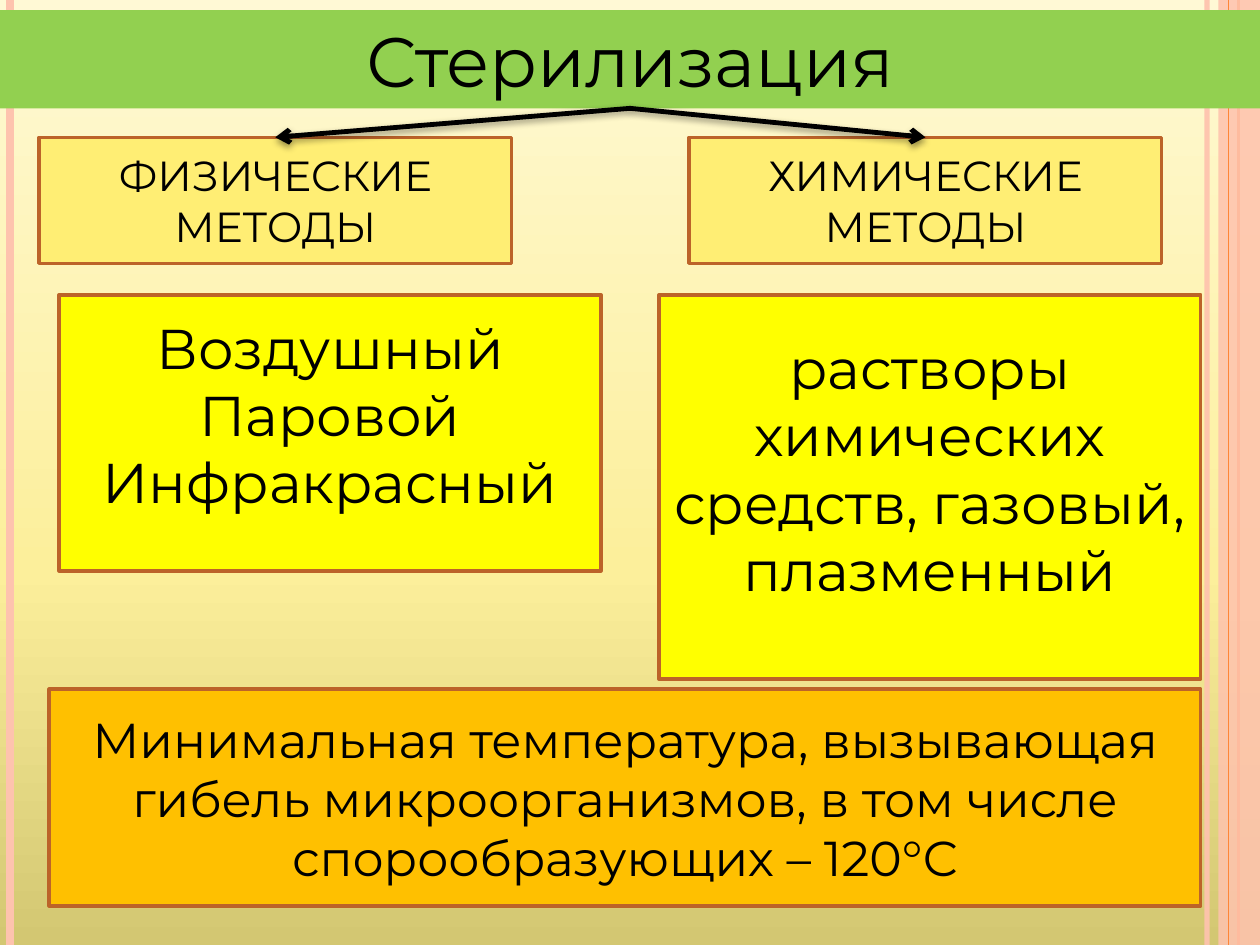
from copy import deepcopy

from lxml import etree
from pptx import Presentation
from pptx.dml.color import RGBColor
from pptx.enum.shapes import MSO_CONNECTOR, MSO_SHAPE
from pptx.enum.text import MSO_ANCHOR, MSO_AUTO_SIZE, PP_ALIGN
from pptx.oxml.ns import qn
from pptx.util import Inches, Pt

RECTANGLE = MSO_SHAPE.RECTANGLE
STRAIGHT = MSO_CONNECTOR.STRAIGHT
CENTER, MIDDLE = PP_ALIGN.CENTER, MSO_ANCHOR.MIDDLE
TOP_SIDE, BOTTOM_SIDE = 0, 2
TITLE_ONLY = 5
WIDTH, HEIGHT = 10, 7.5
FONT = "Montserrat"
COLORS = {
    "text": "000000", "title": "92D050", "heading": "FFEE74", "methods": "FFFF00",
    "note": "FFC000", "border": "BC6329", "pale": "FEC3AE", "orange": "FE8637",
}
BACKGROUND = [(0, "D3C772"), (40, "FCEF9B"), (100, "FFF9D5")]

TITLE = "Стерилизация"
GROUPS = [
    {"heading": "ФИЗИЧЕСКИЕ МЕТОДЫ", "heading_left": 0.31,
     "methods": ["Воздушный", "Паровой", "Инфракрасный"],
     "methods_left": 0.47, "methods_height": 2.19},
    {"heading": "ХИМИЧЕСКИЕ МЕТОДЫ", "heading_left": 5.47,
     "methods": ["растворы химических средств, газовый, плазменный"],
     "methods_left": 5.23, "methods_height": 3.05},
]
NOTE = ("Минимальная температура, вызывающая гибель микроорганизмов, "
        "в том числе спорообразующих – 120°С")
# Vertical stripes: x, colour, line width, opacity in percent
STRIPES_BEHIND = [(9.58, "pale", 3, 93), (0.08, "pale", 4.5, 100), (9.83, "orange", 1.5, 100)]
STRIPES_FRONT = [(9.75, "orange", 0.75, 100)]
HEADING_TOP, HEADING_SIZE = 1.09, (3.75, 1)
METHODS_TOP, METHODS_WIDTH = 2.34, 4.3
BOTTOM_INSET = 0.35


def rgb(name):
    return RGBColor.from_string(COLORS[name])


def set_opacity(fill_parent, percent):
    color = fill_parent.find(".//" + qn("a:srgbClr"))
    etree.SubElement(color, qn("a:alpha"), val=str(percent * 1000))


def paint_background(slide):
    fill = slide.background.fill
    fill.gradient()
    fill.gradient_angle = 90
    stops = slide.element.find(".//" + qn("a:gsLst"))
    stops.insert(1, deepcopy(stops[0]))
    for stop, (position, color) in zip(fill.gradient_stops, BACKGROUND):
        stop.position = position / 100
        stop.color.rgb = RGBColor.from_string(color)


def write_text(shape, paragraphs, size, bottom=0.05):
    frame = shape.text_frame
    frame.word_wrap = True
    frame.auto_size = MSO_AUTO_SIZE.NONE
    frame.vertical_anchor = MIDDLE
    frame.margin_left = frame.margin_right = Inches(0.1)
    frame.margin_top, frame.margin_bottom = Inches(0.05), Inches(bottom)
    frame.text = "\n".join(paragraphs)
    for paragraph in frame.paragraphs:
        paragraph.alignment = CENTER
        font = paragraph.runs[0].font
        font.name, font.size = FONT, Pt(size)
        font.color.rgb = rgb("text")


def add_box(slide, box, fill, border=True):
    shape = slide.shapes.add_shape(RECTANGLE, *map(Inches, box))
    shape.shadow.inherit = False
    shape.fill.solid()
    shape.fill.fore_color.rgb = rgb(fill)
    if border:
        shape.line.color.rgb = rgb("border")
        shape.line.width = Pt(2)
    else:
        shape.line.fill.background()
    return shape


def add_line(slide, start, end, color, width):
    """Return the connector and its effect list, which is still empty."""
    line = slide.shapes.add_connector(STRAIGHT, *map(Inches, (*start, *end)))
    line.line.color.rgb = rgb(color)
    line.line.width = Pt(width)
    effects = etree.SubElement(line.element.spPr, qn("a:effectLst"))
    return line, effects


def add_stripes(slide, stripes):
    for x, color, width, opacity in stripes:
        line, _ = add_line(slide, (x, 0), (x, HEIGHT), color, width)
        if opacity < 100:
            set_opacity(line.element.spPr, opacity)


def add_arrow(slide, source, target):
    line, effects = add_line(slide, (0, 0), (1, 1), "text", 2.75)
    line.begin_connect(source, BOTTOM_SIDE)
    line.end_connect(target, TOP_SIDE)
    etree.SubElement(line.line._get_or_add_ln(), qn("a:tailEnd"), type="arrow")
    shadow = etree.SubElement(effects, qn("a:outerShdw"), blurRad=str(Pt(4)),
                              dist=str(Pt(1.6)), dir="5400000", rotWithShape="0")
    etree.SubElement(shadow, qn("a:srgbClr"), val=COLORS["text"])
    set_opacity(shadow, 42)


def add_title(slide):
    title = slide.shapes.title
    title.left, title.top, title.width, title.height = map(Inches, (0, 0.08, WIDTH, 0.78))
    title.fill.solid()
    title.fill.fore_color.rgb = rgb("title")
    write_text(title, [TITLE], 40)
    slide.shapes.element.append(title.element)  # in front of the stripes
    return title


def main():
    presentation = Presentation()
    presentation.slide_width, presentation.slide_height = Inches(WIDTH), Inches(HEIGHT)
    slide = presentation.slides.add_slide(presentation.slide_layouts[TITLE_ONLY])
    paint_background(slide)

    add_stripes(slide, STRIPES_BEHIND)
    band = add_box(slide, (9.67, 0, 0.33, HEIGHT), "pale", border=False)
    set_opacity(band.element.spPr, 87)
    add_stripes(slide, STRIPES_FRONT)

    title = add_title(slide)
    headings = []
    for group in GROUPS:
        heading = add_box(slide, (group["heading_left"], HEADING_TOP, *HEADING_SIZE), "heading")
        write_text(heading, [group["heading"]], 24)
        headings.append(heading)
        methods = add_box(slide, (group["methods_left"], METHODS_TOP, METHODS_WIDTH,
                                  group["methods_height"]), "methods")
        write_text(methods, group["methods"], 32, bottom=BOTTOM_INSET)
    for heading in headings:
        add_arrow(slide, title, heading)

    note = add_box(slide, (0.39, 5.47, 9.14, 1.72), "note")
    write_text(note, [NOTE], 28)
    presentation.save("out.pptx")


if __name__ == "__main__":
    main()
